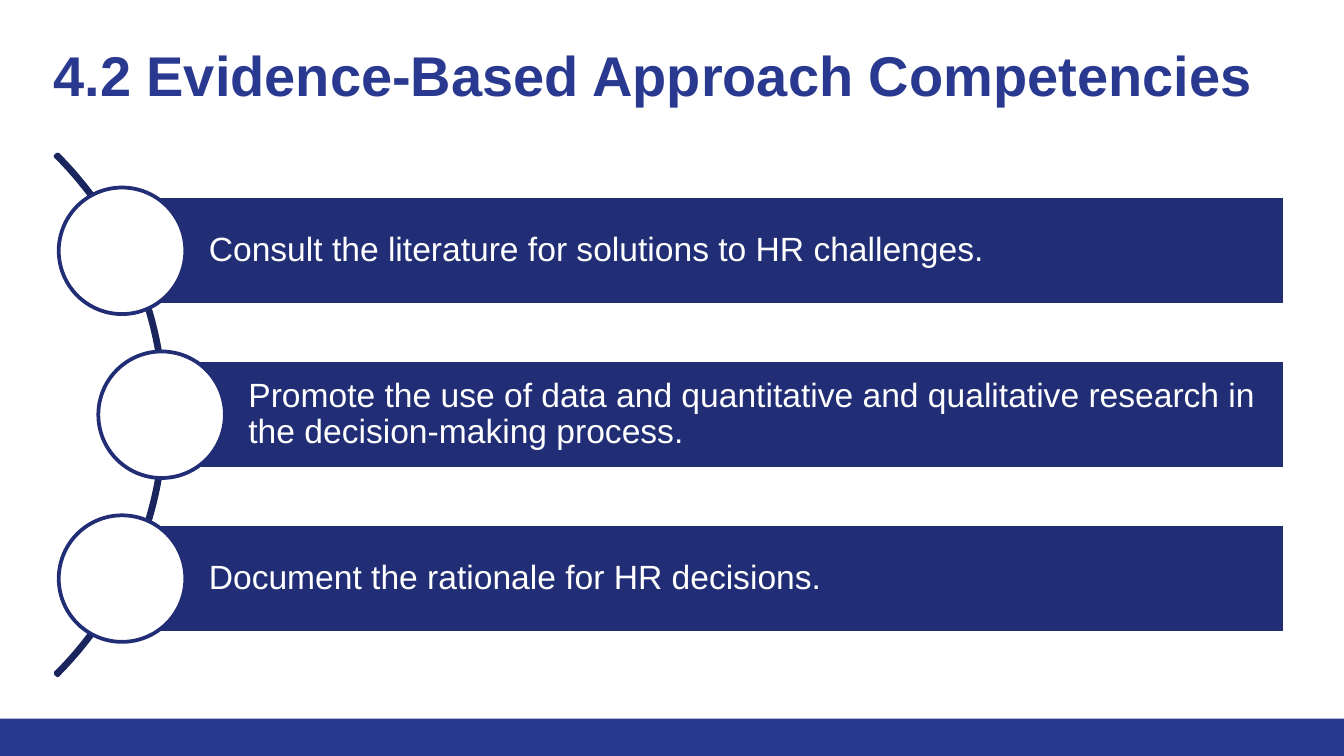
from pptx import Presentation
from pptx.dml.color import RGBColor
from pptx.enum.shapes import MSO_SHAPE as Shape
from pptx.enum.text import MSO_ANCHOR as Anchor, MSO_AUTO_SIZE as AutoSize, PP_ALIGN as Align
from pptx.util import Pt

COLORS = {
    "brand": "2A3990",
    "bar": "212D74",
    "arc": "1A245D",
    "white": "FFFFFF",
}
FONT = "Arial"
WIDTH, HEIGHT = 720, 405


def color(name):
    return RGBColor.from_string(COLORS[name])


class PageBuilder:
    """Holds the style and the current slide."""

    def __init__(self, page):
        self.page = page

    def add_span(self, para, text, size, tint, bold=False):
        span = para.add_run()
        span.text = text
        span.font.name = FONT
        span.font.size = Pt(size)
        span.font.bold = bold
        span.font.color.rgb = color(tint)

    def set_frame(self, frame, anchor, left, other):
        frame.word_wrap = True
        frame.auto_size = AutoSize.NONE
        frame.vertical_anchor = anchor
        frame.margin_left = Pt(left)
        frame.margin_right = frame.margin_top = frame.margin_bottom = Pt(other)

    def title(self, text, left, top, width, height):
        box = self.page.shapes.title
        box.left, box.top, box.width, box.height = map(Pt, (left, top, width, height))
        self.set_frame(box.text_frame, Anchor.TOP, 7.2, 7.2)
        para = box.text_frame.paragraphs[0]
        para.alignment = Align.LEFT
        self.add_span(para, text, 30, "brand", bold=True)

    def shape(self, kind, left, top, width, height, fill=None, line=None):
        box = self.page.shapes.add_shape(kind, *map(Pt, (left, top, width, height)))
        box.shadow.inherit = False
        if fill:
            box.fill.solid()
            box.fill.fore_color.rgb = color(fill)
        else:
            box.fill.background()
        if line:
            box.line.color.rgb = color(line)
            box.line.width = Pt(2)
        else:
            box.line.fill.background()
        return box

    def arc(self, center_x, center_y, radius):
        box = self.shape(Shape.BLOCK_ARC, center_x - radius, center_y - radius,
                         2 * radius, 2 * radius, line="arc")
        # Sweep from 315 to 45 degrees, with a very thin band
        for index, value in enumerate((189, 27, 0.004)):
            box.adjustments[index] = value

    def item(self, text, left, right, middle):
        bar_height, diameter = 58.5, 67.8
        bar = self.shape(Shape.RECTANGLE, left, middle - bar_height / 2,
                         right - left, bar_height, "bar", "white")
        self.set_frame(bar.text_frame, Anchor.MIDDLE, 46.5, 3.6)
        para = bar.text_frame.paragraphs[0]
        para.alignment = Align.LEFT
        para.line_spacing = 0.9
        self.add_span(para, text, 18, "white")
        self.shape(Shape.OVAL, left - diameter / 2, middle - diameter / 2,
                   diameter, diameter, "white", "bar")


def main():
    deck = Presentation()
    deck.slide_width, deck.slide_height = Pt(WIDTH), Pt(HEIGHT)
    builder = PageBuilder(deck.slides.add_slide(deck.slide_layouts[5]))

    # Footer band and title
    builder.shape(Shape.RECTANGLE, 0, 385, WIDTH, HEIGHT - 385, "brand")
    builder.title("4.2 Evidence-Based Approach Competencies", 21.4, 14.4, 671, 47.5)

    # Curved list: the middle item follows the bulge of the arc
    middle, pitch = 222.2, 87.8
    builder.arc(-108.7, middle, 197.4)
    items = [
        ("Consult the literature for solutions to HR challenges.", 65.4),
        ("Promote the use of data and quantitative and qualitative research "
         "in the decision-making process.", 86.6),
        ("Document the rationale for HR decisions.", 65.4),
    ]
    for row, (text, left) in enumerate(items):
        builder.item(text, left, 688.2, middle + (row - 1) * pitch)

    deck.save("out.pptx")


if __name__ == "__main__":
    main()
